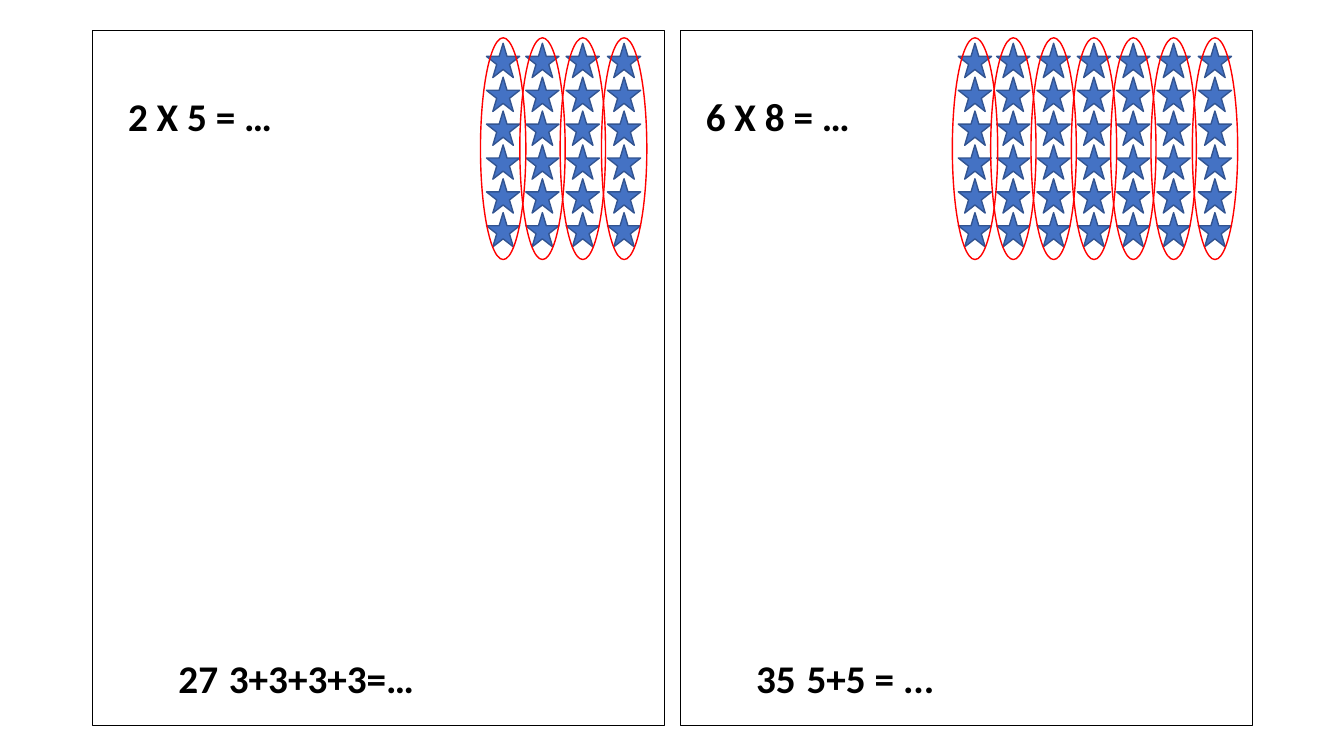
import pptx
import pptx.util
import pptx.dml.color
import pptx.enum.shapes
import pptx.enum.text
import pptx.oxml.ns
from lxml import etree

Inches = pptx.util.Inches
Pt = pptx.util.Pt
SHAPES = pptx.enum.shapes.MSO_SHAPE

CARD_TOP, CARD_WIDTH, CARD_HEIGHT = 0.3, 5.67, 6.9
STAR_ROWS, STAR_PITCH = 6, 0.336
STAR_WIDTH, STAR_HEIGHT = 0.33, 0.34
RING_LENGTH, RING_WIDTH = 2.2, 0.45

CARDS = [
    dict(left=0.92, indent=0.35, product="2 X 5 = …", number="27",
         addition="3+3+3+3=…", tabs=[0.26, 2.68],
         columns=[4.07, 4.46, 4.86, 5.27]),
    dict(left=6.75, indent=0.25, product="6 X 8 = …", number="35",
         addition="5+5 = ...", tabs=[0.28, 3.66],
         columns=[2.92, 3.3, 3.7, 4.1, 4.49, 4.89, 5.3]),
]


def color(value):
    return pptx.dml.color.RGBColor.from_string(value)


def write(para, text, size=28, bold=True, tint="000000", before=0, tabs=()):
    properties = para._p.get_or_add_pPr()
    properties.set("marL", "0")
    properties.set("indent", "0")
    etree.SubElement(properties, pptx.oxml.ns.qn("a:buNone"))
    if tabs:
        stops = etree.SubElement(properties, pptx.oxml.ns.qn("a:tabLst"))
        for position in tabs:
            etree.SubElement(stops, pptx.oxml.ns.qn("a:tab"),
                             pos=str(Inches(position)), algn="l")
    para.alignment = pptx.enum.text.PP_ALIGN.LEFT
    para.line_spacing = 0.9
    para.space_before = Pt(before)
    span = para.add_run()
    span.text = text
    span.font.name = "Calibri"
    span.font.size = Pt(size)
    span.font.bold = bold
    span.font.color.rgb = color(tint)


def add_outlined(page, kind, left, top, width, height, line, fill=None):
    shape = page.shapes.add_shape(kind, Inches(left), Inches(top),
                                  Inches(width), Inches(height))
    shape.shadow.inherit = False
    if fill:
        shape.fill.solid()
        shape.fill.fore_color.rgb = color(fill)
    else:
        shape.fill.background()
    shape.line.color.rgb = color(line)
    shape.line.width = Pt(1)
    return shape


def fill_card(box, card):
    box.left, box.top = Inches(card["left"]), Inches(CARD_TOP)
    box.width, box.height = Inches(CARD_WIDTH), Inches(CARD_HEIGHT)
    box.line.color.rgb = color("000000")
    box.line.width = Pt(0.75)
    frame = box.text_frame
    frame.word_wrap = True
    frame.auto_size = pptx.enum.text.MSO_AUTO_SIZE.NONE
    frame.vertical_anchor = pptx.enum.text.MSO_ANCHOR.TOP
    frame.margin_left = Inches(card["indent"])
    frame.margin_top = Inches(0.67)
    write(frame.paragraphs[0], card["product"])
    write(frame.add_paragraph(), f"\t{card['number']}\t{card['addition']}",
          before=371, tabs=card["tabs"])


def add_star_groups(page, left, top, columns):
    centers = [left + column for column in columns]
    for center in centers:
        for row in range(STAR_ROWS):
            add_outlined(page, SHAPES.STAR_5_POINT, center - STAR_WIDTH / 2,
                         top + 0.13 + row * STAR_PITCH, STAR_WIDTH, STAR_HEIGHT,
                         "325491", "4472C4")
    for center in centers:
        ring = add_outlined(page, SHAPES.OVAL, center - RING_LENGTH / 2,
                            top + 0.95, RING_LENGTH, RING_WIDTH, "FF0000")
        ring.rotation = 90


def main():
    deck = pptx.Presentation()
    deck.slide_width, deck.slide_height = Inches(13.33), Inches(7.5)
    page = deck.slides.add_slide(deck.slide_layouts[3])
    title, *boxes = page.placeholders
    title.element.getparent().remove(title.element)
    for box, card in zip(boxes, CARDS):
        fill_card(box, card)
    for card in CARDS:
        add_star_groups(page, card["left"], CARD_TOP, card["columns"])
    deck.save("out.pptx")


if __name__ == "__main__":
    main()
